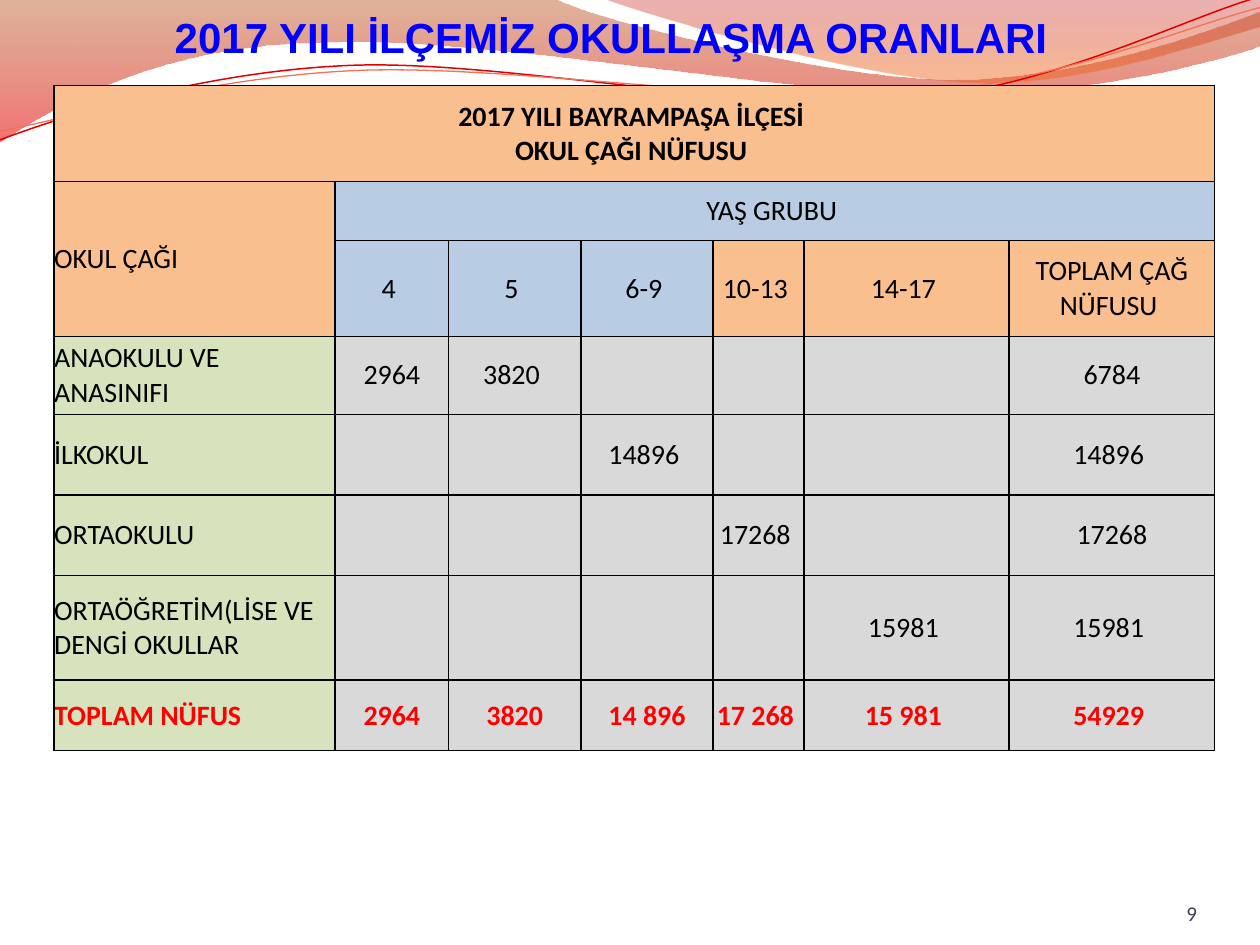
import dataclasses
import typing

import lxml.etree
import pptx
import pptx.dml.color
import pptx.enum.text
import pptx.oxml.ns
import pptx.util

Inches = pptx.util.Inches
Align = pptx.enum.text.PP_ALIGN
Anchor = pptx.enum.text.MSO_ANCHOR
qn = pptx.oxml.ns.qn


@dataclasses.dataclass(frozen=True)
class Theme:
    head_font: str = "Arial"
    body_font: str = "Calibri"
    head_size: int = 24
    body_size: int = 16
    note_size: int = 12
    blue: str = "0000FF"
    black: str = "000000"
    red: str = "FF0000"
    slate: str = "3F4152"
    peach: str = "FABF8F"
    sky: str = "B8CCE4"
    green: str = "D6E3BC"
    grey: str = "D9D9D9"
    rust: str = "B9561F"
    flame: str = "E70000"
    wine: str = "BD0000"
    orange: str = "EC6215"
    line_red: str = "E10000"
    coral: str = "F17259"


THEME = Theme()


class Stop(typing.NamedTuple):
    place: float
    color: str
    alpha: int


@dataclasses.dataclass(frozen=True)
class Wave:
    """An outline: each step is a line (x, y) or a cubic curve of three points."""
    start: tuple
    steps: tuple
    stops: tuple = ()
    color: str = ""
    width: float = 0


WAVES = (
    Wave((0, -0.01), (
        (4.4, -0.01), (4.76, 0.17, 6.64, 0.63, 7.58, 0.63),
        (8.53, 0.63, 9.58, 0.26, 10, 0.09), (10.01, 0.36),
        (9.83, 0.44, 8.7, 0.76, 7.46, 0.75), (6.22, 0.75, 3.82, 0.28, 2.57, 0.34),
        (1.29, 0.35, 0.46, 0.83, -0.01, 1.13)),
        stops=(Stop(0, THEME.rust, 45), Stop(1, THEME.flame, 55))),
    Wave((4.79, -0.01), (
        (5.09, 0.11, 6.82, 0.62, 7.69, 0.65), (8.56, 0.69, 9.61, 0.32, 10, 0.21),
        (10, 0)),
        stops=(Stop(0, THEME.wine, 30), Stop(0.8, THEME.orange, 45))),
    Wave((0, 1.11), (
        (0.48, 0.93, 1.58, 0.57, 2.77, 0.52), (3.95, 0.47, 5.93, 0.89, 7.13, 0.8),
        (8.33, 0.71, 9.38, 0.15, 9.98, -0.02)), color=THEME.line_red, width=0.85),
    Wave((0, 1.04), (
        (0.47, 0.96, 1.64, 0.61, 2.83, 0.56), (4.03, 0.51, 5.97, 0.83, 7.17, 0.75),
        (8.36, 0.67, 9.41, 0.21, 10, 0.06)), color=THEME.coral, width=0.75),
)

COLS = (2.23, 0.9, 1.05, 1.05, 0.72, 1.63, 1.63)
ROWS = (0.76, 0.47, 0.76, 0.62, 0.64, 0.64, 0.83, 0.56)
CELLS = (
    ("2017 YILI BAYRAMPAŞA İLÇESİ \nOKUL ÇAĞI NÜFUSU ", "", "", "", "", "", ""),
    ("OKUL ÇAĞI", "YAŞ GRUBU ", "", "", "", "", ""),
    ("", "4 ", "5 ", "6-9 ", "10-13 ", "14-17 ", "TOPLAM ÇAĞ NÜFUSU "),
    ("ANAOKULU VE ANASINIFI", "2964", "3820 ", "", "", "", "6784"),
    ("İLKOKUL", "", "", "14896 ", "", "", "14896 "),
    ("ORTAOKULU", "", "", "", "17268 ", "", "17268"),
    ("ORTAÖĞRETİM(LİSE VE DENGİ OKULLAR", "", "", "", "", "15981 ", "15981 "),
    ("TOPLAM NÜFUS", "2964", "3820", "14 896", "17 268 ", "15 981 ", "54929 "),
)
MERGES = (((0, 0), (0, 6)), ((1, 0), (2, 0)), ((1, 1), (1, 6)))


def rgb(code: str) -> pptx.dml.color.RGBColor:
    return pptx.dml.color.RGBColor.from_string(code)


def write(frame, text: str, *, font: str = THEME.body_font,
          size: int = THEME.body_size, color: str = THEME.black,
          bold: bool = False, align=Align.CENTER) -> None:
    for i, line in enumerate(text.split("\n")):
        para = frame.add_paragraph() if i else frame.paragraphs[0]
        para.alignment = align
        run = para.add_run()
        run.text = line
        run.font.name, run.font.size = font, pptx.util.Pt(size)
        run.font.bold, run.font.color.rgb = bold, rgb(color)


def bend(shape, steps: tuple) -> None:
    """Join the three line points of each curved step into one cubic curve."""
    lines = iter(list(shape.element.iter(qn("a:lnTo"))))
    for step in steps:
        first = next(lines)
        if len(step) == 6:
            first.tag = qn("a:cubicBezTo")
            for line in (next(lines), next(lines)):
                first.append(line[0])
                line.getparent().remove(line)


def draw_wave(slide, wave: Wave) -> None:
    dots = [(Inches(step[k]), Inches(step[k + 1]))
            for step in wave.steps for k in range(0, len(step), 2)]
    pen = slide.shapes.build_freeform(*map(Inches, wave.start))
    pen.add_line_segments(dots, close=bool(wave.stops))
    shape = pen.convert_to_shape()
    bend(shape, wave.steps)
    shape.shadow.inherit = False
    if not wave.stops:
        shape.fill.background()
        shape.line.color.rgb = rgb(wave.color)
        shape.line.width = pptx.util.Pt(wave.width)
        return
    shape.line.fill.background()
    shape.fill.gradient()
    shape.fill.gradient_angle = 270
    for mark, stop in zip(shape.fill.gradient_stops, wave.stops):
        mark.position, mark.color.rgb = stop.place, rgb(stop.color)
    tints = shape.element.spPr.find(qn("a:gradFill")).iter(qn("a:srgbClr"))
    for tint, stop in zip(list(tints), wave.stops):
        lxml.etree.SubElement(tint, qn("a:alpha"), val=str(stop.alpha * 1000))


def frame_cell(cell) -> None:
    """Give all four sides of the cell a thin black border."""
    props = cell._tc.get_or_add_tcPr()
    for side in ("L", "R", "T", "B"):
        edge = lxml.etree.SubElement(props, qn(f"a:ln{side}"), w=str(pptx.util.Pt(1)))
        fill = lxml.etree.SubElement(edge, qn("a:solidFill"))
        lxml.etree.SubElement(fill, qn("a:srgbClr"), val=THEME.black)


def cell_fill(row: int, col: int) -> str:
    if row > 2:
        return THEME.grey if col else THEME.green
    if row == 0 or col == 0 or (row == 2 and col > 3):
        return THEME.peach
    return THEME.sky


def draw_table(slide) -> None:
    table = slide.shapes.add_table(
        len(ROWS), len(COLS), Inches(0.43), Inches(0.68),
        Inches(sum(COLS)), Inches(sum(ROWS))).table
    for col, width in zip(table.columns, COLS):
        col.width = Inches(width)
    last = len(ROWS) - 1
    for r, (height, texts) in enumerate(zip(ROWS, CELLS)):
        table.rows[r].height = Inches(height)
        for c, text in enumerate(texts):
            cell = table.cell(r, c)
            frame_cell(cell)
            cell.fill.solid()
            cell.fill.fore_color.rgb = rgb(cell_fill(r, c))
            cell.margin_left = cell.margin_right = 0
            cell.margin_top = cell.margin_bottom = 0
            cell.vertical_anchor = Anchor.MIDDLE
            if text:
                write(cell.text_frame, text, bold=r in (0, last),
                      color=THEME.red if r == last else THEME.black,
                      align=Align.LEFT if r and not c else Align.CENTER)
    for start, end in MERGES:
        table.cell(*start).merge(table.cell(*end))


def set_box(shape, left: float, top: float, width: float, height: float):
    """Place a text shape, clear its margins and return its frame."""
    shape.left, shape.top = Inches(left), Inches(top)
    shape.width, shape.height = Inches(width), Inches(height)
    frame = shape.text_frame
    frame.margin_left = frame.margin_right = 0
    frame.margin_top = frame.margin_bottom = 0
    frame.word_wrap = True
    frame.auto_size = pptx.enum.text.MSO_AUTO_SIZE.NONE
    frame.vertical_anchor = Anchor.BOTTOM
    return frame


def main() -> None:
    deck = pptx.Presentation()
    deck.slide_width, deck.slide_height = Inches(10), Inches(7.5)
    slide = deck.slides.add_slide(deck.slide_layouts[5])
    for wave in WAVES:
        draw_wave(slide, wave)
    title = slide.shapes.title
    title.element.getparent().append(title.element)  # in front of the waves
    write(set_box(title, 0.35, 0.05, 9, 0.44), "2017 YILI İLÇEMİZ OKULLAŞMA ORANLARI",
          font=THEME.head_font, size=THEME.head_size, color=THEME.blue, bold=True)
    draw_table(slide)
    page = slide.shapes.add_textbox(0, 0, 0, 0)
    write(set_box(page, 8.67, 6.95, 0.83, 0.4), "9", size=THEME.note_size,
          color=THEME.slate, align=Align.RIGHT)
    deck.save("out.pptx")


if __name__ == "__main__":
    main()
